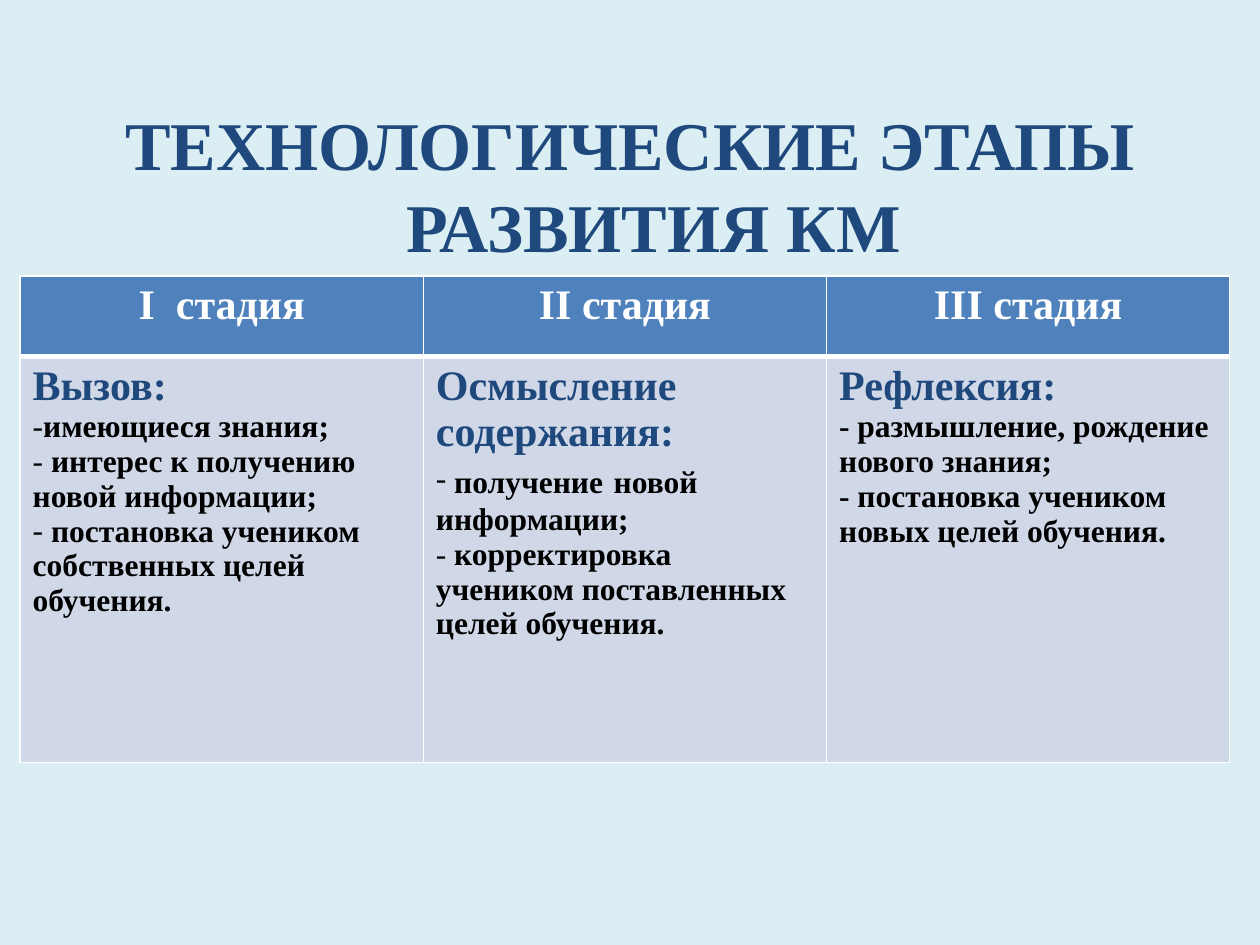
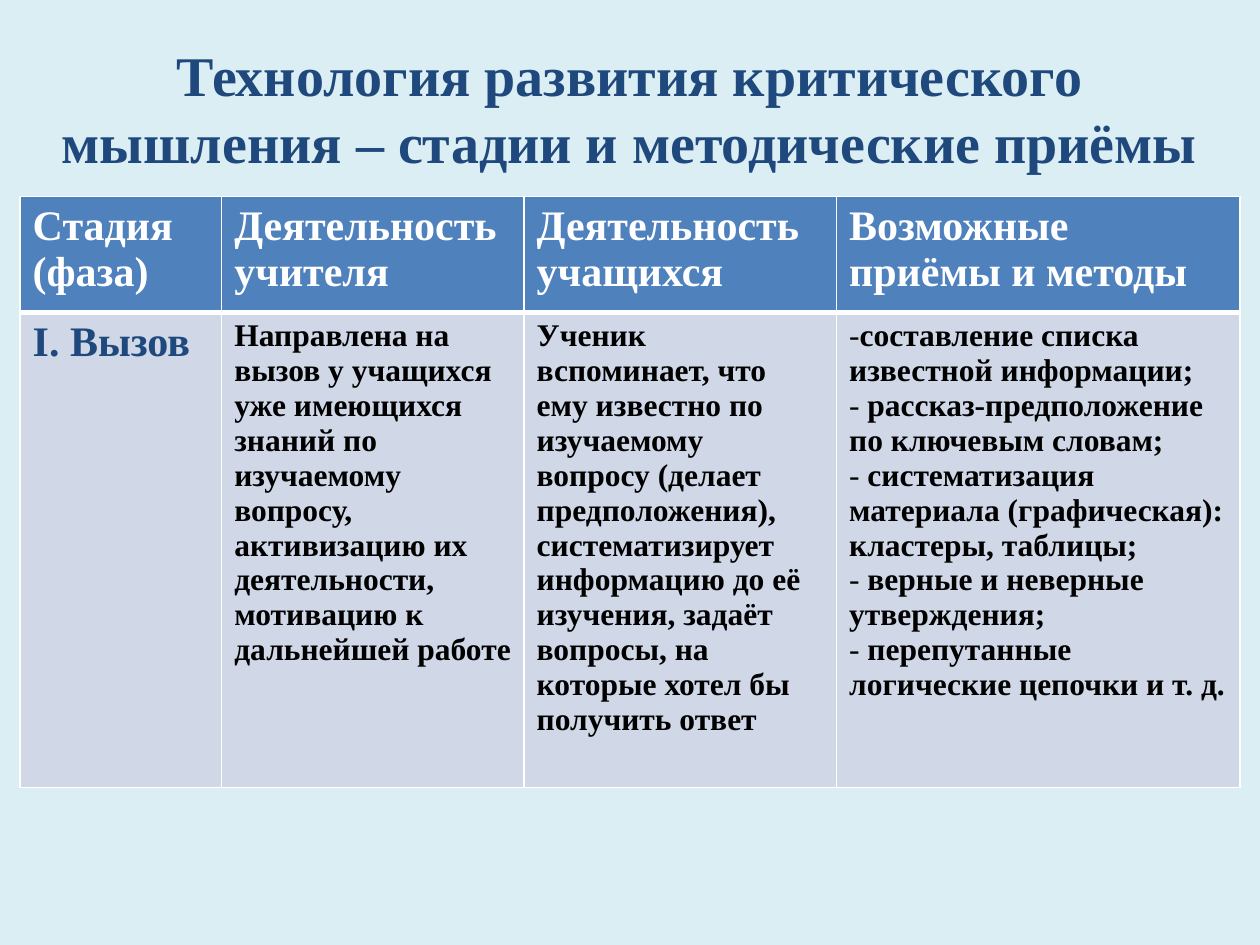
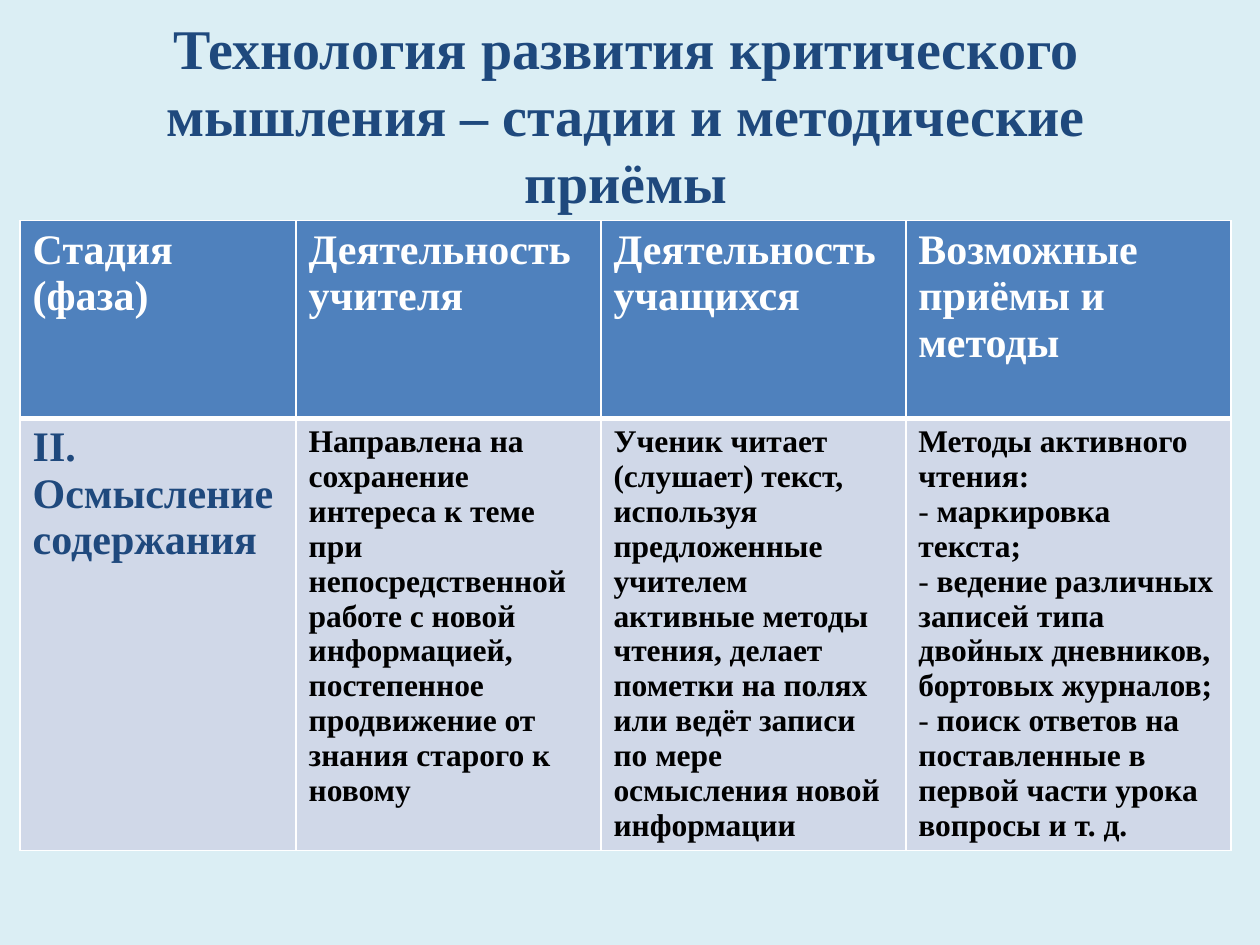
from dataclasses import dataclass

from lxml.etree import SubElement
from pptx import Presentation
from pptx.dml.color import RGBColor
from pptx.enum.text import MSO_ANCHOR as Anchor, MSO_AUTO_SIZE as AutoSize, PP_ALIGN as Align
from pptx.oxml.ns import qn
from pptx.util import Inches, Pt

# Shared style
SKY = RGBColor(0xDB, 0xEE, 0xF4)
NAVY = RGBColor(0x1F, 0x49, 0x7D)
BLUE = RGBColor(0x4F, 0x81, 0xBD)
PALE = RGBColor(0xD0, 0xD8, 0xE8)
WHITE = RGBColor(0xFF, 0xFF, 0xFF)
BLACK = RGBColor(0x00, 0x00, 0x00)
FONT = "Times New Roman"
HEAD_SIZE, BODY_SIZE = 24, 18
THIN, THICK = 1, 3
TABLE_LEFT = 0.16


@dataclass(frozen=True)
class Span:
    text: str
    size: int = BODY_SIZE
    color: RGBColor = BLACK


@dataclass(frozen=True)
class Para:
    spans: tuple[Span, ...]
    bullet: bool = False
    align: Align = Align.LEFT


@dataclass(frozen=True)
class Title:
    text: str
    box: tuple[float, float, float, float]
    size: int = 32
    anchor: Anchor = Anchor.MIDDLE
    hanging: float = 0


@dataclass(frozen=True)
class StageTable:
    top: float
    columns: tuple[float, ...]
    rows: tuple[float, float]
    headers: tuple[str, ...]
    cells: tuple[list[Para], ...]
    header_align: Align = Align.LEFT


def stage(text: str) -> Para:
    return Para((Span(text, HEAD_SIZE, NAVY),))


def plain(text: str) -> Para:
    return Para((Span(text),))


def item(*texts: str) -> Para:
    """Dash item; a lone space between words is set in the larger size."""
    return Para(tuple(Span(t, HEAD_SIZE if t == " " else BODY_SIZE) for t in texts), bullet=True)


# Text drawing
def add_span(para, span: Span) -> None:
    run = para.add_run()
    run.text = span.text
    run.font.name = FONT
    run.font.size = Pt(span.size)
    run.font.bold = True
    run.font.color.rgb = span.color


def set_indent(para, margin: float, indent: float) -> None:
    props = para._p.get_or_add_pPr()
    props.set("marL", str(Inches(margin)))
    props.set("indent", str(Inches(indent)))


def fill_text(frame, paras: list[Para]) -> None:
    for index, content in enumerate(paras):
        para = frame.add_paragraph() if index else frame.paragraphs[0]
        para.alignment = content.align
        if content.bullet:
            set_indent(para, 0, 0)
            props = para._p.get_or_add_pPr()
            SubElement(props, qn("a:buFont"), typeface=FONT)
            SubElement(props, qn("a:buChar"), char="-")
        for span in content.spans:
            add_span(para, span)


def draw_title(page, title: Title) -> None:
    shape = page.shapes.title
    shape.left, shape.top, shape.width, shape.height = map(Inches, title.box)
    frame = shape.text_frame
    frame.word_wrap = True
    frame.auto_size = AutoSize.NONE
    frame.vertical_anchor = title.anchor
    para = frame.paragraphs[0]
    para.alignment = Align.CENTER
    set_indent(para, title.hanging, -title.hanging)
    add_span(para, Span(title.text, title.size, NAVY))


# Table drawing
def set_borders(cell, top: int, bottom: int) -> None:
    props = cell._tc.get_or_add_tcPr()
    for side, width in (("L", THIN), ("R", THIN), ("T", top), ("B", bottom)):
        line = SubElement(props, qn(f"a:ln{side}"), w=str(Pt(width)))
        fill = SubElement(line, qn("a:solidFill"))
        SubElement(fill, qn("a:srgbClr"), val=str(WHITE))


def draw_cell(cell, paras: list[Para], fill: RGBColor, top: int, bottom: int) -> None:
    set_borders(cell, top, bottom)
    cell.fill.solid()
    cell.fill.fore_color.rgb = fill
    fill_text(cell.text_frame, paras)


def draw_table(page, content: StageTable) -> None:
    table = page.shapes.add_table(
        2, len(content.columns), Inches(TABLE_LEFT), Inches(content.top),
        Inches(sum(content.columns)), Inches(sum(content.rows))).table
    table.horz_banding = False
    for row, height in zip(table.rows, content.rows):
        row.height = Inches(height)
    for index, width in enumerate(content.columns):
        table.columns[index].width = Inches(width)
        header = Para((Span(content.headers[index], HEAD_SIZE, WHITE),), align=content.header_align)
        draw_cell(table.cell(0, index), [header], BLUE, THIN, THICK)
        draw_cell(table.cell(1, index), content.cells[index], PALE, THICK, THIN)


# Content
METHODS_TITLE = "Технология развития критического мышления – стадии и методические приёмы"
METHODS_HEADERS = ("Стадия (фаза)", "Деятельность учителя", "Деятельность учащихся",
                   "Возможные приёмы и методы")

PAGES = (
    (Title("ТЕХНОЛОГИЧЕСКИЕ ЭТАПЫ РАЗВИТИЯ КМ", (0, 0.76, 10, 1.4), 39, Anchor.TOP, 0.38),
     StageTable(
         2.19, (3.2,) * 3, (0.64, 3.22),
         ("I  стадия", "II стадия", "III стадия"),
         ([stage("Вызов:"),
           item("имеющиеся знания;"),
           item(" интерес к получению новой информации;"),
           item(" постановка учеником собственных целей обучения.")],
          [stage("Осмысление содержания:"),
           item(" получение", " ", "новой", " ", "информации;"),
           item(" корректировка учеником поставленных целей обучения.")],
          [stage("Рефлексия:"),
           plain("- размышление, рождение нового знания;"),
           plain("- постановка учеником новых целей обучения.")]),
         Align.CENTER)),
    (Title(METHODS_TITLE, (0.31, 0.16, 9.38, 1.39)),
     StageTable(
         1.56, (1.6, 2.4, 2.48, 3.2), (0.92, 3.77), METHODS_HEADERS,
         ([stage("I. Вызов")],
          [plain("Направлена на вызов у учащихся уже имеющихся знаний по изучаемому вопросу, "
                 "активизацию их деятельности, мотивацию к дальнейшей работе")],
          [plain("Ученик вспоминает, что ему известно по изучаемому вопросу (делает "
                 "предположения), систематизирует информацию до её изучения, задаёт вопросы, "
                 "на которые хотел бы получить ответ")],
          [item("составление списка известной информации;"),
           item(" рассказ-предположение по ключевым словам;"),
           item(" систематизация материала (графическая): кластеры, таблицы;"),
           item(" верные и неверные утверждения;"),
           item(" перепутанные логические цепочки и т. д.")]))),
    (Title(METHODS_TITLE, (0.47, 0.28, 9, 1.25)),
     StageTable(
         1.75, (2.19, 2.42, 2.42, 2.58), (1.57, 3.43), METHODS_HEADERS,
         ([stage("II. Осмысление содержания")],
          [plain("Направлена на сохранение интереса к теме при непосредственной работе с новой "
                 "информацией, постепенное продвижение от знания старого к новому")],
          [plain("Ученик читает (слушает) текст, используя предложенные учителем активные методы "
                 "чтения, делает пометки на полях или ведёт записи по мере осмысления новой "
                 "информации")],
          [plain("Методы активного чтения:"),
           item(" маркировка текста;"),
           item(" ведение различных записей типа двойных дневников, бортовых журналов;"),
           item(" поиск ответов на поставленные в первой части урока вопросы и т. д.")]))),
)


def main() -> None:
    deck = Presentation()
    deck.slide_width, deck.slide_height = Inches(10), Inches(7.5)
    background = deck.slide_master.background.fill
    background.solid()
    background.fore_color.rgb = SKY
    title_only = deck.slide_layouts[5]
    for title, table in PAGES:
        page = deck.slides.add_slide(title_only)
        draw_title(page, title)
        draw_table(page, table)
    deck.save("out.pptx")


if __name__ == "__main__":
    main()
